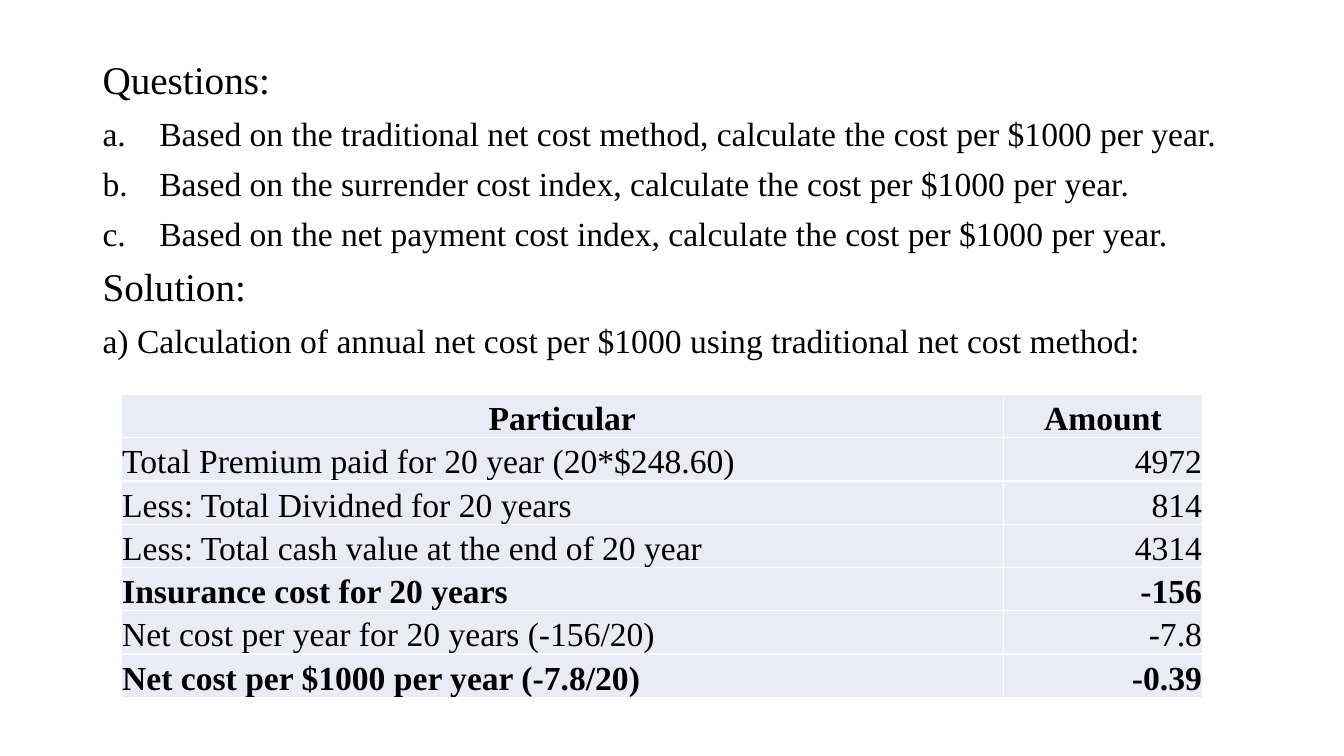
from dataclasses import dataclass

from lxml import etree
from pptx import Presentation
from pptx import util as u
from pptx.dml.color import RGBColor
from pptx.enum import text
from pptx.oxml import ns


@dataclass(frozen=True)
class Theme:
    font: str = "Times New Roman"
    ink: str = "000000"
    fill: str = "E9EBF5"
    edge: str = "FFFFFF"
    head: int = 28
    body: int = 24


class Page:
    def __init__(self, deck, theme):
        self.theme = theme
        # Content layout; this slide has no title
        self.slide = deck.slides.add_slide(deck.slide_layouts[1])
        title = self.slide.shapes.title
        title.element.getparent().remove(title.element)

    def style(self, para, size, bold=False):
        look = {"name": self.theme.font, "size": u.Pt(size), "bold": bold}
        for key, value in look.items():
            setattr(para.font, key, value)
        para.font.color.rgb = RGBColor.from_string(self.theme.ink)

    def bullet(self, para, mark):
        props = para._p.get_or_add_pPr()
        hang = u.Cm(1.43) if mark else 0
        props.set("marL", str(hang))
        props.set("indent", str(-hang))
        if mark:
            etree.SubElement(props, ns.qn("a:buFont"), typeface="+mj-lt")
            etree.SubElement(props, ns.qn("a:buAutoNum"), type=mark)
        else:
            etree.SubElement(props, ns.qn("a:buNone"))

    def prose(self, box, lines):
        body = self.slide.placeholders[1]
        for key, value in zip(("left", "top", "width", "height"), box):
            setattr(body, key, u.Cm(value))
        frame = body.text_frame
        frame.auto_size = text.MSO_AUTO_SIZE.NONE
        frame.vertical_anchor = text.MSO_ANCHOR.TOP
        for i, (words, size, mark) in enumerate(lines):
            para = frame.add_paragraph() if i else frame.paragraphs[0]
            self.bullet(para, mark)
            form = {
                "text": words,
                "alignment": text.PP_ALIGN.JUSTIFY,
                "line_spacing": 0.9,
                "space_before": u.Pt(10 if i else 0),
            }
            for key, value in form.items():
                setattr(para, key, value)
            self.style(para, size)

    def border(self, cell):
        props = cell._tc.get_or_add_tcPr()
        for side in ("lnL", "lnR", "lnT", "lnB"):
            line = etree.SubElement(props, ns.qn("a:" + side), w=str(u.Pt(1)))
            fill = etree.SubElement(line, ns.qn("a:solidFill"))
            etree.SubElement(fill, ns.qn("a:srgbClr"), val=self.theme.edge)

    def cell(self, cell, words, align, bold):
        form = {
            "text": words,
            "vertical_anchor": text.MSO_ANCHOR.BOTTOM,
            "margin_left": u.Cm(0.02),
            "margin_right": u.Cm(0.02),
            "margin_top": u.Cm(0.02),
            "margin_bottom": 0,
        }
        for key, value in form.items():
            setattr(cell, key, value)
        self.border(cell)
        cell.fill.solid()
        cell.fill.fore_color.rgb = RGBColor.from_string(self.theme.fill)
        para = cell.text_frame.paragraphs[0]
        para.alignment = align
        self.style(para, self.theme.body, bold)

    def table(self, left, top, widths, height, rows):
        size = (sum(widths), height * len(rows))
        grid = self.slide.shapes.add_table(
            len(rows), len(widths), *map(u.Cm, (left, top, *size))).table
        grid.first_row = grid.horz_banding = False
        for col, width in zip(grid.columns, widths):
            col.width = u.Cm(width)
        sides = (text.PP_ALIGN.LEFT, text.PP_ALIGN.RIGHT)
        for r, (*words, bold) in enumerate(rows):
            for c, word in enumerate(words):
                align = sides[c] if r else text.PP_ALIGN.CENTER
                self.cell(grid.cell(r, c), word, align, bold)


def main():
    deck = Presentation()
    deck.slide_width, deck.slide_height = u.Cm(33.87), u.Cm(19.05)
    theme = Theme()
    page = Page(deck, theme)

    # Questions and start of the solution
    ask = "Based on the {}, calculate the cost per $1000 per year."
    bases = ("traditional net cost method", "surrender cost index",
             "net payment cost index")
    page.prose((2.33, 1.4, 29.21, 15.77), [
        ("Questions:", theme.head, None),
        *((ask.format(base), theme.body, "alphaLcPeriod") for base in bases),
        ("Solution:", theme.head, None),
        ("a) Calculation of annual net cost per $1000 using traditional "
         "net cost method:", theme.body, None),
    ])

    # Net cost calculation: particular, amount, bold
    page.table(3.06, 9.94, (22.22, 5.03), 1.09, [
        ("Particular", "Amount", True),
        ("Total Premium paid for 20 year (20*$248.60)", "4972", False),
        ("Less: Total Dividned for 20 years", "814", False),
        ("Less: Total cash value at the end of 20 year", "4314", False),
        ("Insurance cost for 20 years", "-156", True),
        ("Net cost per year for 20 years (-156/20)", "-7.8", False),
        ("Net cost per $1000 per year (-7.8/20)", "-0.39", True),
    ])
    deck.save("out.pptx")


if __name__ == "__main__":
    main()
